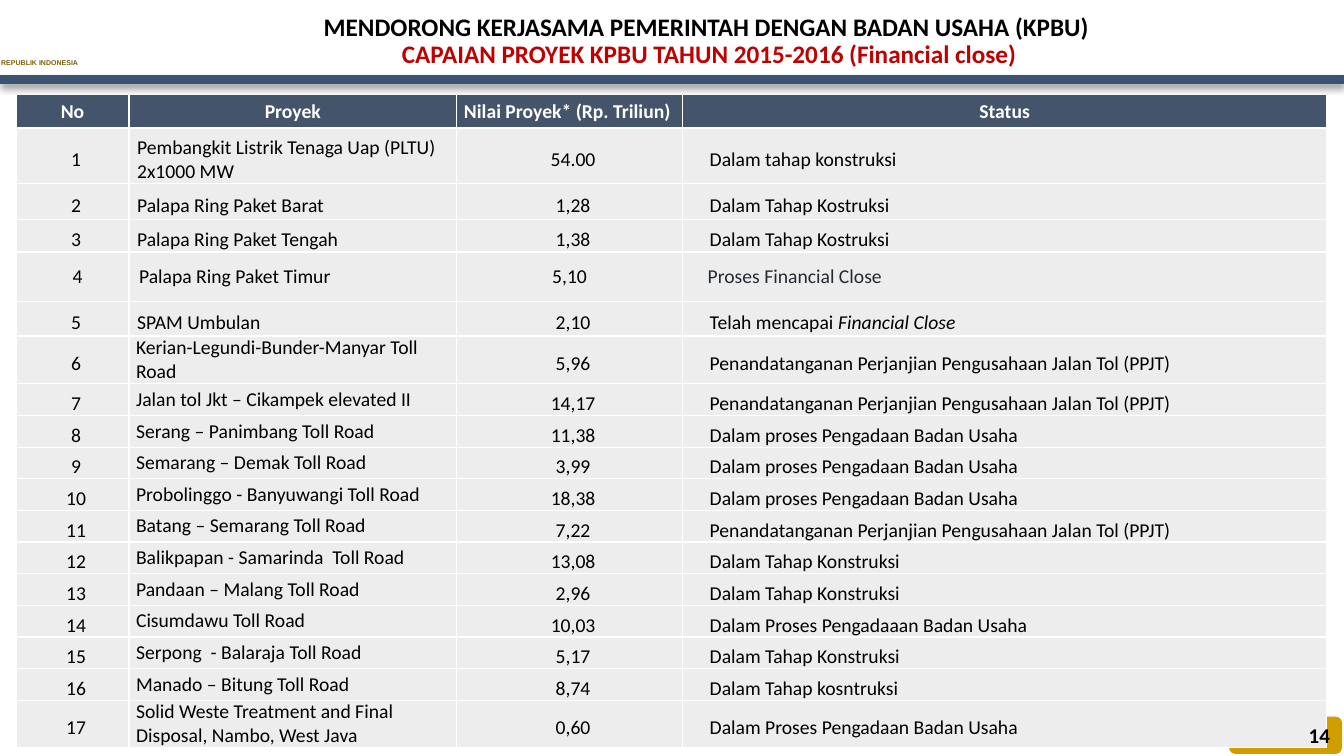
from lxml import etree
from pptx import Presentation, util as u
from pptx.dml.color import RGBColor
from pptx.enum import shapes, text
from pptx.oxml import parse_xml
from pptx.oxml.ns import qn

NAMESPACE = 'xmlns:a="http://schemas.openxmlformats.org/drawingml/2006/main"'


def color(value):
    return RGBColor.from_string(value)


def add_run(paragraph, words, size, fill, bold=False, italic=False, font="Calibri"):
    run = paragraph.add_run()
    run.text = words
    run.font.name, run.font.size = font, u.Pt(size)
    run.font.bold, run.font.italic = bold, italic
    run.font.color.rgb = color(fill)


presentation = Presentation()
presentation.slide_width, presentation.slide_height = u.Inches(13.33), u.Inches(7.5)
width = presentation.slide_width
slide = presentation.slides.add_slide(presentation.slide_layouts[5])

country = slide.shapes.add_textbox(u.Inches(-0.12), u.Inches(0.53), u.Inches(1.03), u.Inches(0.21))
country.text_frame.word_wrap = False
country_paragraph = country.text_frame.paragraphs[0]
country_paragraph.alignment = text.PP_ALIGN.CENTER
add_run(country_paragraph, "REPUBLIK INDONESIA", 5, "806000", bold=True, font="Arial")

page_box = [u.Inches(length) for length in (12.19, 7.11, 1.12, 0.37)]
page_badge = slide.shapes.add_shape(shapes.MSO_SHAPE.ROUNDED_RECTANGLE, *page_box)
page_badge.shadow.inherit = False
page_badge.fill.solid()
page_badge.fill.fore_color.rgb = color("D09E00")
page_badge.line.fill.background()

title = slide.shapes.title
title.left, title.top, title.width, title.height = [
    u.Inches(length) for length in (1.28, 0.08, 11.51, 0.67)]
title_frame = title.text_frame
title_frame.word_wrap = True
title_frame.auto_size = text.MSO_AUTO_SIZE.NONE
title_frame.vertical_anchor = text.MSO_ANCHOR.MIDDLE
title_frame.margin_left = title_frame.margin_right = u.Inches(0.12)
title_frame.margin_top = title_frame.margin_bottom = u.Inches(0.06)
title_lines = [
    ("MENDORONG KERJASAMA PEMERINTAH DENGAN BADAN USAHA (KPBU) ", "000000"),
    ("CAPAIAN PROYEK KPBU TAHUN 2015-2016 (Financial close)", "C00000"),
]
for index, (words, fill) in enumerate(title_lines):
    paragraph = title_frame.add_paragraph() if index else title_frame.paragraphs[0]
    paragraph.alignment = text.PP_ALIGN.CENTER
    paragraph.line_spacing = 0.9
    paragraph.space_before = u.Pt(0)
    add_run(paragraph, words, 18, fill, bold=True)

signing = "Penandatanganan Perjanjian Pengusahaan Jalan Tol (PPJT)"
procurement = "Dalam proses Pengadaan Badan Usaha"
construction = "Dalam Tahap Konstruksi"
headers = ["No", "Proyek", "Nilai Proyek* (Rp. Triliun) ", "Status"]
projects = [
    ("Pembangkit Listrik Tenaga Uap (PLTU) 2x1000 MW", "54.00", "Dalam tahap konstruksi"),
    ("Palapa Ring Paket Barat", "1,28", "Dalam Tahap Kostruksi"),
    ("Palapa Ring Paket Tengah", "1,38", "Dalam Tahap Kostruksi"),
    ("Palapa Ring Paket Timur", "5,10", "Proses Financial Close"),
    ("SPAM Umbulan", "2,10", "Telah mencapai |Financial Close"),
    ("Kerian-Legundi-Bunder-Manyar Toll Road", "5,96", signing),
    ("Jalan tol Jkt – Cikampek elevated II", "14,17", signing),
    ("Serang – Panimbang Toll Road", "11,38", procurement),
    ("Semarang – Demak Toll Road", "3,99", procurement),
    ("Probolinggo - Banyuwangi Toll Road", "18,38", procurement),
    ("Batang – Semarang Toll Road", "7,22", signing),
    ("Balikpapan - Samarinda  Toll Road", "13,08", construction),
    ("Pandaan – Malang Toll Road", "2,96", construction),
    ("Cisumdawu Toll Road", "10,03", "Dalam Proses Pengadaaan Badan Usaha"),
    ("Serpong  - Balaraja Toll Road", "5,17", construction),
    ("Manado – Bitung Toll Road", "8,74", "Dalam Tahap kosntruksi"),
    ("Solid Weste Treatment and Final Disposal, Nambo, West Java", "0,60",
     "Dalam Proses Pengadaan Badan Usaha"),
]
rows = [headers] + [(str(number), *project) for number, project in enumerate(projects, 1)]
column_widths = [1.12, 3.25, 2.24, 6.39]
row_heights = [0.33, 0.55, 0.36, 0.32, 0.49, 0.34, 0.47, 0.32] + [0.31] * 9 + [0.46]

header_insets = (0.01, 0.01, 0.01, 0)
body_insets = (0.08, 0.08, 0.01, 0)
status_insets = (0.27, 0.08, 0.01, 0)
toll_insets = (0.07, 0, 0.07, 0)
timur_row, first_toll_row = 4, 6
timur_insets = [(0.11, 0, 0.01, 0), (0.1, 0, 0.1, 0), (0, 0, 0, 0), (0.25, 0.13, 0.25, 0.13)]

table = slide.shapes.add_table(len(rows), len(headers), u.Inches(0.16), u.Inches(0.94),
                               u.Inches(sum(column_widths)), u.Inches(sum(row_heights))).table
for column, column_width in zip(table.columns, column_widths):
    column.width = u.Inches(column_width)

for row_index, row in enumerate(rows):
    table.rows[row_index].height = u.Inches(row_heights[row_index])
    is_header = row_index == 0
    for column_index, words in enumerate(row):
        cell = table.cell(row_index, column_index)
        cell.fill.solid()
        cell.fill.fore_color.rgb = color("44546A" if is_header else "EDEDED")
        cell.vertical_anchor = text.MSO_ANCHOR.MIDDLE
        if is_header:
            insets = header_insets
        elif row_index == timur_row:
            insets = timur_insets[column_index]
        elif column_index == 1 and row_index >= first_toll_row:
            insets = toll_insets
        else:
            insets = status_insets if column_index == 3 else body_insets
        cell.margin_left, cell.margin_top, cell.margin_right, cell.margin_bottom = map(u.Inches, insets)

        paragraph = cell.text_frame.paragraphs[0]
        centred = is_header or column_index in (0, 2)
        paragraph.alignment = text.PP_ALIGN.CENTER if centred else text.PP_ALIGN.LEFT
        fill = "FFFFFF" if is_header else "000000"
        if row_index == timur_row and column_index == 3:
            fill = "222A35"
        for part_index, part in enumerate(words.split("|")):
            add_run(paragraph, part, 14, fill, bold=is_header, italic=part_index > 0)

        properties = cell._tc.get_or_add_tcPr()
        for position, side in enumerate(("lnL", "lnR", "lnT", "lnB")):
            properties.insert(position, parse_xml(
                f'<a:{side} {NAMESPACE} w="12700"><a:solidFill>'
                f'<a:srgbClr val="FFFFFF"/></a:solidFill></a:{side}>'))

page_number = slide.shapes.add_textbox(*page_box)
page_frame = page_number.text_frame
page_frame.word_wrap = True
page_frame.vertical_anchor = text.MSO_ANCHOR.MIDDLE
page_frame.margin_left = page_frame.margin_right = u.Inches(0.12)
page_frame.paragraphs[0].alignment = text.PP_ALIGN.RIGHT
add_run(page_frame.paragraphs[0], "14", 15, "000000", bold=True)

divider = slide.shapes.add_connector(shapes.MSO_CONNECTOR.STRAIGHT, 0, u.Inches(0.79), width, u.Inches(0.79))
divider.line.color.rgb = color("3C536F")
divider.line.width = u.Pt(6)
effects = etree.SubElement(divider._element.spPr, qn("a:effectLst"))
effects.append(parse_xml(
    f'<a:outerShdw {NAMESPACE} blurRad="{u.Pt(5)}" dist="{u.Pt(3)}" dir="5400000" rotWithShape="0">'
    '<a:srgbClr val="000000"><a:alpha val="40000"/></a:srgbClr></a:outerShdw>'))

presentation.save("out.pptx")
